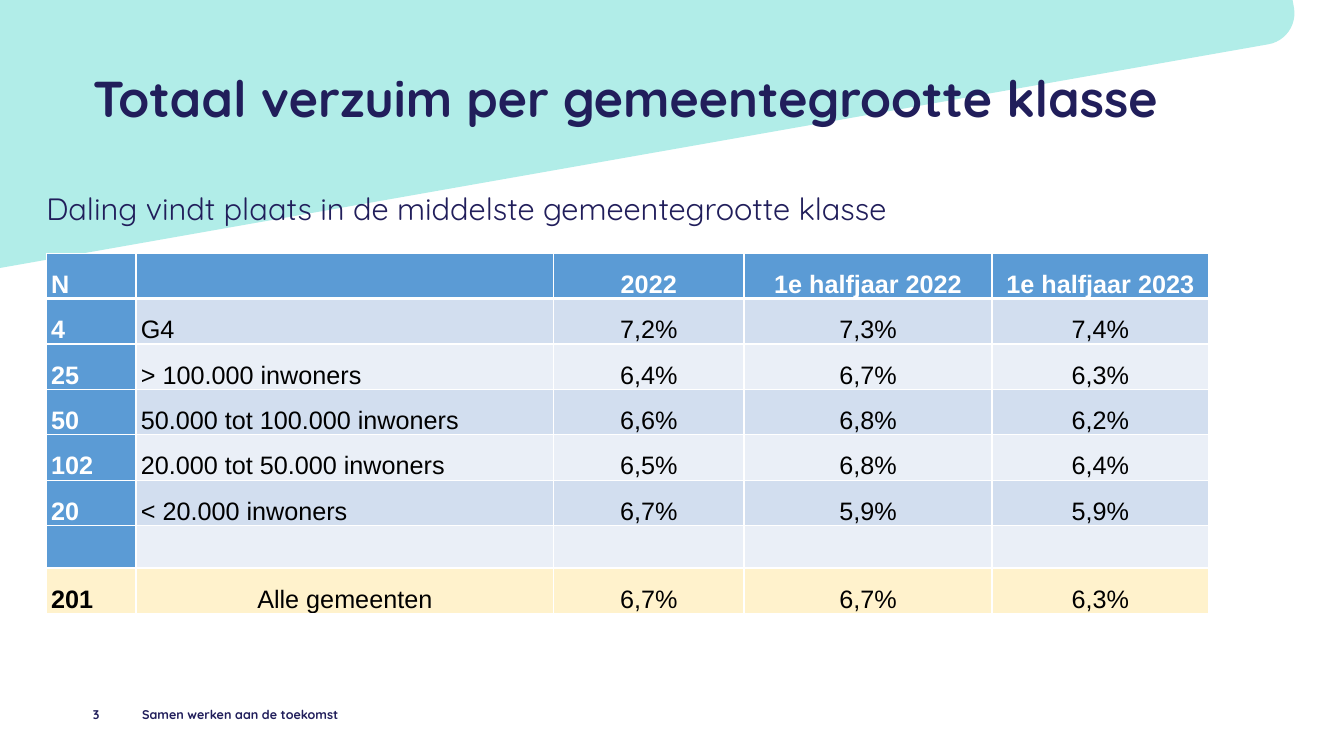
"""Builds the slide on total absence per municipality size class."""
import pptx
import pptx.dml.color
import pptx.enum.shapes
import pptx.enum.text
import pptx.oxml
import pptx.oxml.ns
import pptx.util

Cm = pptx.util.Cm
Pt = pptx.util.Pt
Align = pptx.enum.text.PP_ALIGN

COLORS = {
    "navy": "211E5B",
    "mint": "B1EDE8",
    "blue": "5B9BD5",
    "band_dark": "D2DEEF",
    "band_light": "EAEFF7",
    "total": "FFF2CC",
    "white": "FFFFFF",
    "black": "000000",
}

HEADER = ["N", "", "2022", "1e halfjaar 2022", "1e halfjaar 2023"]
SIZE_CLASSES = [
    ["4", "G4", "7,2%", "7,3%", "7,4%"],
    ["25", "> 100.000 inwoners", "6,4%", "6,7%", "6,3%"],
    ["50", "50.000 tot 100.000 inwoners", "6,6%", "6,8%", "6,2%"],
    ["102", "20.000 tot 50.000 inwoners", "6,5%", "6,8%", "6,4%"],
    ["20", "< 20.000 inwoners", "6,7%", "5,9%", "5,9%"],
    ["", "", "", "", ""],
]
TOTAL = ["201", "Alle gemeenten", "6,7%", "6,7%", "6,3%"]
ROWS = [HEADER, *SIZE_CLASSES, TOTAL]
COLUMN_WIDTHS = [2.26, 10.52, 4.8, 6.25, 5.46]


def rgb(name):
    return pptx.dml.color.RGBColor.from_string(COLORS[name])


def write(frame, text, *, size, font="Quicksand", color="navy", bold=False,
          align=Align.LEFT, spacing=1.0, after=0):
    paragraph = frame.paragraphs[0]
    paragraph.alignment = align
    paragraph.line_spacing = spacing
    paragraph.space_after = Pt(after)
    if text:
        run = paragraph.add_run()
        run.text = text
        run.font.size = Pt(size)
        run.font.name = font
        run.font.bold = bold
        run.font.color.rgb = rgb(color)


class AbsenceSlide:
    def __init__(self, presentation):
        self.slide = presentation.slides.add_slide(presentation.slide_layouts[6])
        self.shapes = self.slide.shapes
        self.slide.background.fill.solid()
        self.slide.background.fill.fore_color.rgb = rgb("white")

    def band(self, left, top, width, height, rotation, rounding):
        band = self.shapes.add_shape(
            pptx.enum.shapes.MSO_SHAPE.ROUNDED_RECTANGLE,
            Cm(left), Cm(top), Cm(width), Cm(height))
        band.rotation = rotation
        band.adjustments[0] = rounding
        band.shadow.inherit = False
        band.fill.solid()
        band.fill.fore_color.rgb = rgb("mint")
        band.line.fill.background()

    def text(self, left, top, width, height, text, **style):
        frame = self.shapes.add_textbox(
            Cm(left), Cm(top), Cm(width), Cm(height)).text_frame
        frame.word_wrap = True
        frame.margin_left = frame.margin_right = 0
        frame.margin_top = frame.margin_bottom = 0
        write(frame, text, **style)

    def border(self, cell, side, points):
        namespace = pptx.oxml.ns.nsdecls("a")
        cell._tc.get_or_add_tcPr().append(pptx.oxml.parse_xml(
            f'<a:{side} {namespace} w="{Pt(points)}"><a:solidFill>'
            f'<a:srgbClr val="{COLORS["white"]}"/></a:solidFill></a:{side}>'))

    def cell(self, cell, value, row, column):
        is_header = row == 0
        is_total = row == len(ROWS) - 1
        is_blue = is_header or (column == 0 and not is_total)
        if is_blue:
            fill = "blue"
        elif is_total:
            fill = "total"
        else:
            fill = "band_dark" if row % 2 else "band_light"

        self.border(cell, "lnL", 1)
        self.border(cell, "lnR", 1)
        self.border(cell, "lnT", 3 if row == 1 else 1)
        self.border(cell, "lnB", 3 if is_header else 1)
        cell.fill.solid()
        cell.fill.fore_color.rgb = rgb(fill)
        cell.vertical_anchor = pptx.enum.text.MSO_ANCHOR.BOTTOM
        cell.margin_left = cell.margin_right = Cm(0.12)
        cell.margin_top = cell.margin_bottom = 0

        centred = column > 1 or (is_total and column == 1)
        write(cell.text_frame, value, size=18, font="Arial",
              color="white" if is_blue else "black",
              bold=is_header or column == 0,
              align=Align.CENTER if centred else Align.LEFT,
              spacing=1.5 if value else 1.0)

    def table(self, left, top, row_height):
        table = self.shapes.add_table(
            len(ROWS), len(HEADER), Cm(left), Cm(top),
            Cm(sum(COLUMN_WIDTHS)), Cm(row_height * len(ROWS))).table
        for column, width in zip(table.columns, COLUMN_WIDTHS):
            column.width = Cm(width)
        for r, values in enumerate(ROWS):
            table.rows[r].height = Cm(row_height)
            for c, value in enumerate(values):
                self.cell(table.cell(r, c), value, r, c)


def main():
    presentation = pptx.Presentation()
    presentation.slide_width = Cm(33.87)
    presentation.slide_height = Cm(19.05)

    slide = AbsenceSlide(presentation)
    slide.band(-1.9, -2.77, 34.32, 6.78, rotation=350, rounding=0.117)
    slide.text(3.58, 17.81, 9.09, 1.02, "Samen werken aan de toekomst",
               size=9, bold=True)
    slide.text(2.34, 1.7, 28.58, 3.35,
               "Totaal verzuim per gemeentegrootte klasse", size=36, bold=True)
    slide.table(1.17, 6.38, row_height=1.07)
    slide.text(2.34, 17.81, 1.22, 1.02, "3", size=9, bold=True)
    slide.text(1.17, 4.5, 28.58, 12.09,
               "Daling vindt plaats in de middelste gemeentegrootte klasse",
               size=22, spacing=1.3, after=10)

    presentation.save("out.pptx")


if __name__ == "__main__":
    main()
